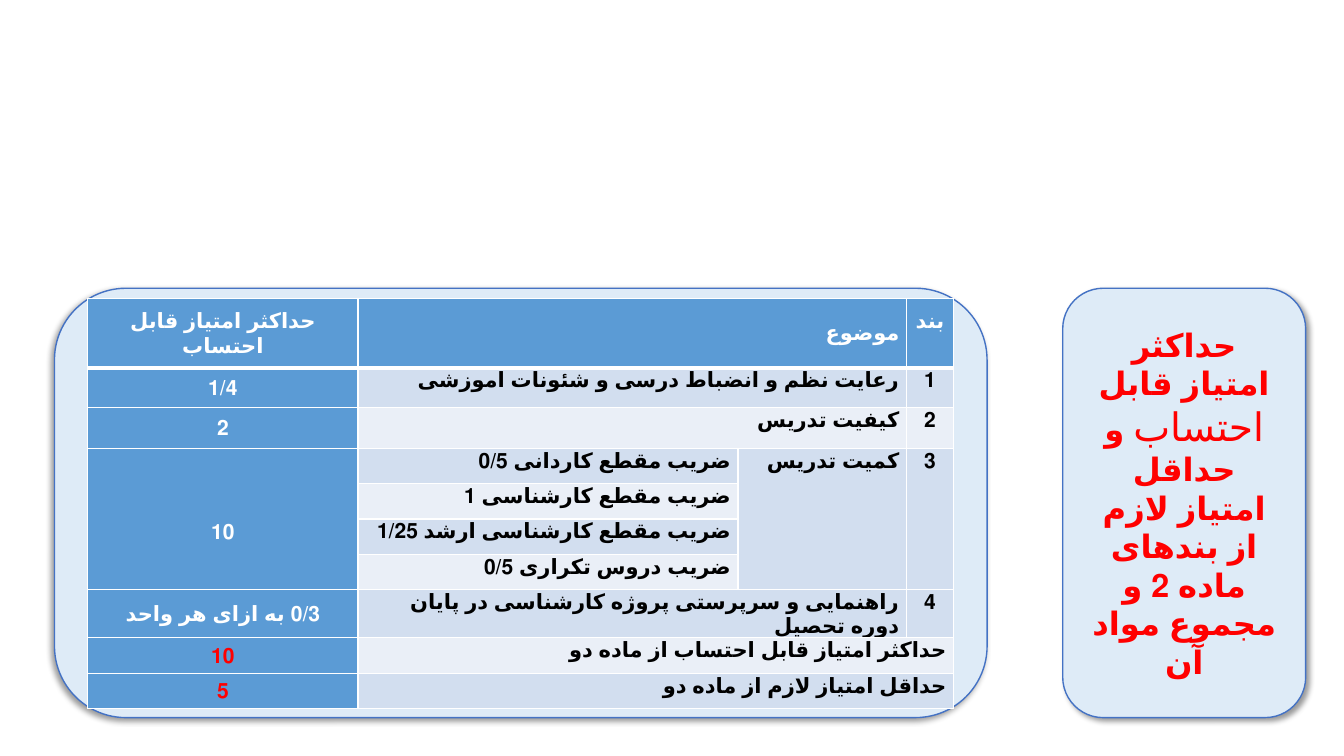
from lxml import etree
from pptx import Presentation
from pptx import util as u
from pptx.dml.color import RGBColor
from pptx.enum import lang, shapes, text
from pptx.oxml import parse_xml
from pptx.oxml.ns import nsdecls, qn

THEME = {
    "font": "Calibri",
    "panel": "DEEBF7", "outline": "4472C4", "accent": "5B9BD5",
    "bands": ("EAEFF7", "D2DEEF"),
    "light": "FFFFFF", "dark": "000000", "alert": "FF0000",
    "panel_size": 23, "stress_size": 28, "table_size": 15,
}

PANEL_TEXT = [  # text, stressed
    ("حداکثر امتیاز قابل ", False),
    ("احتساب", True),
    (" و حداقل امتیاز لازم از بندهای ماده 2 و مجموع مواد آن", False),
]
PANEL_TOP, PANEL_HEIGHT = 2.86, 4.26
PANELS = {  # left, width, shadow direction in degrees
    "summary": (10.54, 2.41, 45),
    "table": (0.54, 9.25, 135),
}

# Columns: maximum score, subject detail, subject, clause
ROWS = [
    ("حداکثر امتیاز قابل احتساب", "موضوع", None, "بند"),
    ("1/4", "رعایت نظم و انضباط درسی و شئونات آموزشی", None, "1"),
    ("2", "کیفیت تدریس", None, "2"),
    ("10", "ضریب مقطع کاردانی 0/5", "کمیت تدریس", "3"),
    (None, "ضریب مقطع کارشناسی 1", None, None),
    (None, "ضریب مقطع کارشناسی ارشد 1/25", None, None),
    (None, "ضریب دروس تکراری 0/5", None, None),
    ("0/3 به ازای هر واحد", "راهنمایی و سرپرستی پروژه کارشناسی در پایان دوره تحصیل", None, "4"),
    ("10", "حداکثر امتیاز قابل احتساب از ماده دو", None, None),
    ("5", "حداقل امتیاز لازم از ماده دو", None, None),
]
COLUMN_WIDTHS = [2.68, 3.77, 1.67, 0.47]
ROW_HEIGHTS = [0.69, 0.39, 0.41, 0.35, 0.35, 0.35, 0.35, 0.41, 0.35, 0.35]
SCORE, DETAIL, SUBJECT, CLAUSE = range(4)
QUANTITY_FIRST, QUANTITY_LAST = 3, 6
TOTALS_FROM = 8
MERGES = [((row, DETAIL), (row, SUBJECT)) for row in (0, 1, 2, 7)]
MERGES += [((QUANTITY_FIRST, col), (QUANTITY_LAST, col)) for col in (SCORE, SUBJECT, CLAUSE)]
MERGES += [((row, DETAIL), (row, CLAUSE)) for row in (8, 9)]
LINE_SHIFT = 0.24  # moves centred text half a line up or down


def add_run(paragraph, words, color, size, bold=True):
    run = paragraph.add_run()
    run.text = words
    style = {"name": THEME["font"], "size": u.Pt(size), "bold": bold,
             "language_id": lang.MSO_LANGUAGE_ID.FARSI}
    for name, value in style.items():
        setattr(run.font, name, value)
    run.font.color.rgb = RGBColor.from_string(color)


def set_rtl(paragraph, alignment):
    paragraph.alignment = alignment
    paragraph._p.get_or_add_pPr().set("rtl", "1")


def add_panel(slide, left, width, direction):
    panel = slide.shapes.add_shape(
        shapes.MSO_SHAPE.ROUNDED_RECTANGLE,
        *map(u.Inches, (left, PANEL_TOP, width, PANEL_HEIGHT)))
    panel.fill.solid()
    panel.fill.fore_color.rgb = RGBColor.from_string(THEME["panel"])
    panel.line.color.rgb = RGBColor.from_string(THEME["outline"])
    panel.line.width = u.Pt(1)
    panel.shadow.inherit = False
    effects = panel._element.spPr.find(qn("a:effectLst"))
    effects.append(parse_xml(
        f'<a:outerShdw {nsdecls("a")} blurRad="{u.Pt(4)}" dist="{u.Pt(3)}" '
        f'dir="{direction * 60000}" rotWithShape="0"><a:srgbClr val="000000">'
        '<a:alpha val="40000"/></a:srgbClr></a:outerShdw>'))
    return panel


def set_borders(cell, row):
    properties = cell._tc.get_or_add_tcPr()
    for side in ("lnL", "lnR", "lnT", "lnB"):
        width = 3 if (row, side) in ((0, "lnB"), (1, "lnT")) else 1
        line = etree.SubElement(properties, qn(f"a:{side}"), w=str(u.Pt(width)))
        fill = etree.SubElement(line, qn("a:solidFill"))
        etree.SubElement(fill, qn("a:srgbClr"), val=THEME["light"])


def fill_cell(cell, row, col, words):
    set_borders(cell, row)
    heading = row == 0 or col == SCORE
    cell.fill.solid()
    cell.fill.fore_color.rgb = RGBColor.from_string(
        THEME["accent"] if heading else THEME["bands"][row % 2])
    margins = {"margin_left": 0.07, "margin_right": 0.07, "margin_top": 0, "margin_bottom": 0}
    if (row, col) == (0, CLAUSE):
        margins["margin_bottom"] = LINE_SHIFT
    elif (row, col) == (QUANTITY_FIRST, SCORE):
        margins["margin_top"] = LINE_SHIFT
    for name, value in margins.items():
        setattr(cell, name, u.Inches(value))
    cell.vertical_anchor = text.MSO_ANCHOR.MIDDLE if heading else text.MSO_ANCHOR.TOP
    if words is None:
        return
    paragraph = cell.text_frame.paragraphs[0]
    centred = col in (SCORE, CLAUSE)
    set_rtl(paragraph, text.PP_ALIGN.CENTER if centred else text.PP_ALIGN.RIGHT)
    paragraph.line_spacing = 1.15
    if col == SCORE and row >= TOTALS_FROM:
        color = THEME["alert"]
    else:
        color = THEME["light"] if heading else THEME["dark"]
    add_run(paragraph, words, color, THEME["table_size"])


def add_summary(slide):
    frame = add_panel(slide, *PANELS["summary"]).text_frame
    frame.word_wrap = True
    frame.vertical_anchor = text.MSO_ANCHOR.MIDDLE
    paragraph = frame.paragraphs[0]
    set_rtl(paragraph, text.PP_ALIGN.CENTER)
    for words, stressed in PANEL_TEXT:
        size = THEME["stress_size" if stressed else "panel_size"]
        add_run(paragraph, words, THEME["alert"], size, bold=not stressed)


def add_score_table(slide):
    add_panel(slide, *PANELS["table"])
    table = slide.shapes.add_table(
        len(ROWS), len(COLUMN_WIDTHS), u.Inches(0.87), u.Inches(2.96),
        u.Inches(sum(COLUMN_WIDTHS)), u.Inches(sum(ROW_HEIGHTS))).table
    for column, width in zip(table.columns, COLUMN_WIDTHS):
        column.width = u.Inches(width)
    for table_row, height in zip(table.rows, ROW_HEIGHTS):
        table_row.height = u.Inches(height)
    for start, end in MERGES:
        table.cell(*start).merge(table.cell(*end))
    for row, entries in enumerate(ROWS):
        for col, words in enumerate(entries):
            fill_cell(table.cell(row, col), row, col, words)


def main():
    deck = Presentation()
    deck.slide_width, deck.slide_height = u.Inches(13.33), u.Inches(7.5)
    slide = deck.slides.add_slide(deck.slide_layouts[6])
    add_summary(slide)
    add_score_table(slide)
    deck.save("out.pptx")


if __name__ == "__main__":
    main()
